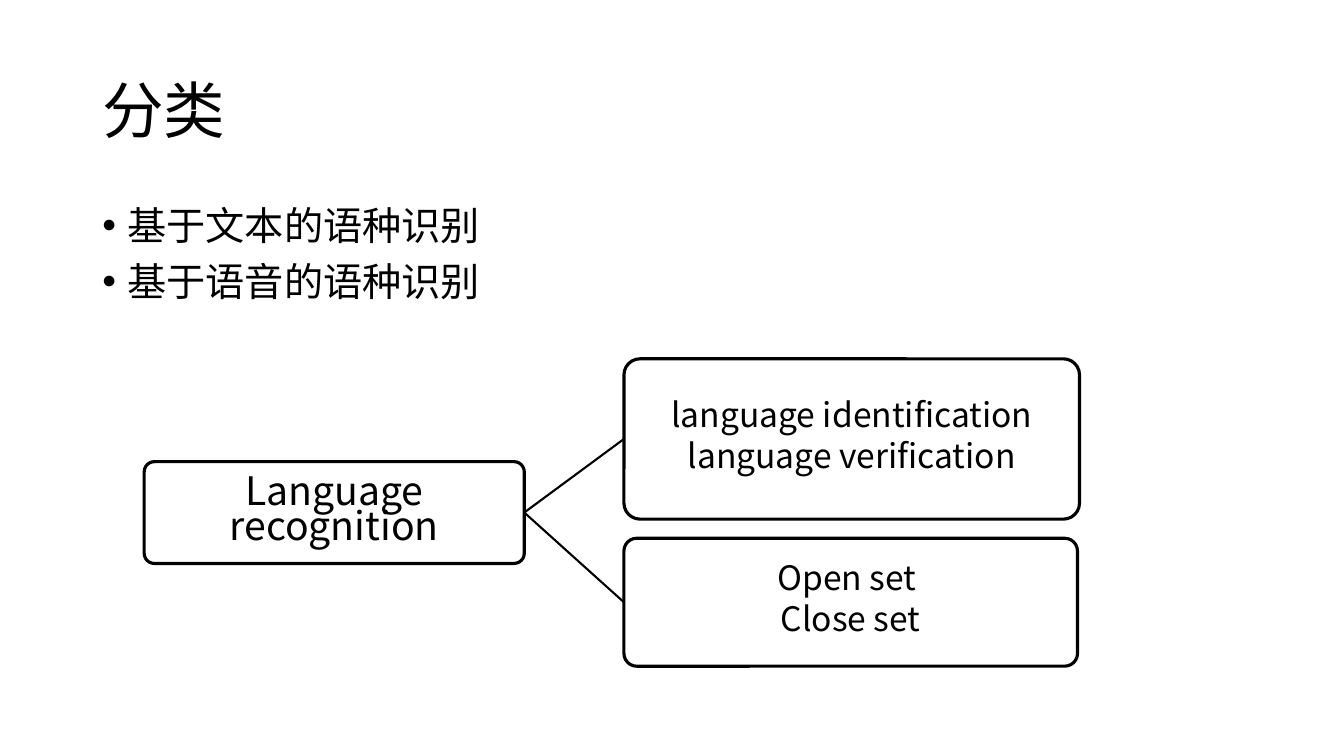
import pptx
import pptx.util
import pptx.dml.color
import pptx.enum.shapes
import pptx.enum.text
import pptx.oxml.ns
import lxml.etree

Pt = pptx.util.Pt
qn = pptx.oxml.ns.qn
align = pptx.enum.text.PP_ALIGN
anchor = pptx.enum.text.MSO_ANCHOR
face = "Noto Sans CJK SC"


def color(code):
    return pptx.dml.color.RGBColor.from_string(code)


def write(shape, lines, size, space, gap, side, place):
    frame = shape.text_frame
    frame.word_wrap = True
    frame.vertical_anchor = place
    frame.text = "\n".join(lines)
    for i, para in enumerate(frame.paragraphs):
        para.alignment = side
        para.line_spacing = space
        para.space_before = Pt(gap if i else 0)
        for run in para.runs:
            run.font.size = Pt(size)
            run.font.name = face
            run.font.color.rgb = color("000000")
            east = lxml.etree.SubElement(run.font._element, qn("a:ea"))
            east.set("typeface", face)


deck = pptx.Presentation()
deck.slide_width, deck.slide_height = Pt(960), Pt(540)
slide = deck.slides.add_slide(deck.slide_layouts[6])
shapes = slide.shapes

title = shapes.add_textbox(Pt(66), Pt(28.75), Pt(828), Pt(104.4))
write(title, ["分类"], 44, 0.9, 0, align.LEFT, anchor.MIDDLE)

body = shapes.add_textbox(Pt(66), Pt(143.75), Pt(828), Pt(342.6))
points = ["基于文本的语种识别", "基于语音的语种识别"]
write(body, points, 28, 0.9, 10, align.LEFT, anchor.TOP)
for para in body.text_frame.paragraphs:
    props = para._p.get_or_add_pPr()
    props.set("marL", str(Pt(18)))
    props.set("indent", str(Pt(-18)))
    font = lxml.etree.SubElement(props, qn("a:buFont"))
    font.set("typeface", "Arial")
    mark = lxml.etree.SubElement(props, qn("a:buChar"))
    mark.set("char", "•")

nodes = [
    (103, 329.75, 271.5, 72.7, 28, ["Language recognition"]),
    (445.7, 256.3, 325.4, 114.5, 24,
     ["language identification", " language verification "]),
    (445.7, 384.5, 324, 91.4, 24, ["Open set ", "Close set"]),
]
boxes = []
for left, top, width, height, size, lines in nodes:
    box = shapes.add_shape(pptx.enum.shapes.MSO_SHAPE.ROUNDED_RECTANGLE,
                           Pt(left), Pt(top), Pt(width), Pt(height))
    box.adjustments[0] = 0.1
    box.shadow.inherit = False
    box.fill.background()
    box.line.color.rgb = color("000000")
    box.line.width = Pt(2.25)
    frame = box.text_frame
    frame.margin_left = frame.margin_right = Pt(1.5)
    frame.margin_top = frame.margin_bottom = Pt(1.5)
    write(box, lines, size, 0.74, 8.4, align.CENTER, anchor.MIDDLE)
    boxes.append(box)

root, *leaves = boxes
for leaf in leaves:
    link = shapes.add_connector(pptx.enum.shapes.MSO_CONNECTOR.STRAIGHT,
                                0, 0, 0, 0)
    link.begin_connect(root, 3)
    link.end_connect(leaf, 1)
    link.line.color.rgb = color("000000")
    link.line.width = Pt(1.5)
    lxml.etree.SubElement(link._element.spPr, qn("a:effectLst"))

deck.save("out.pptx")
